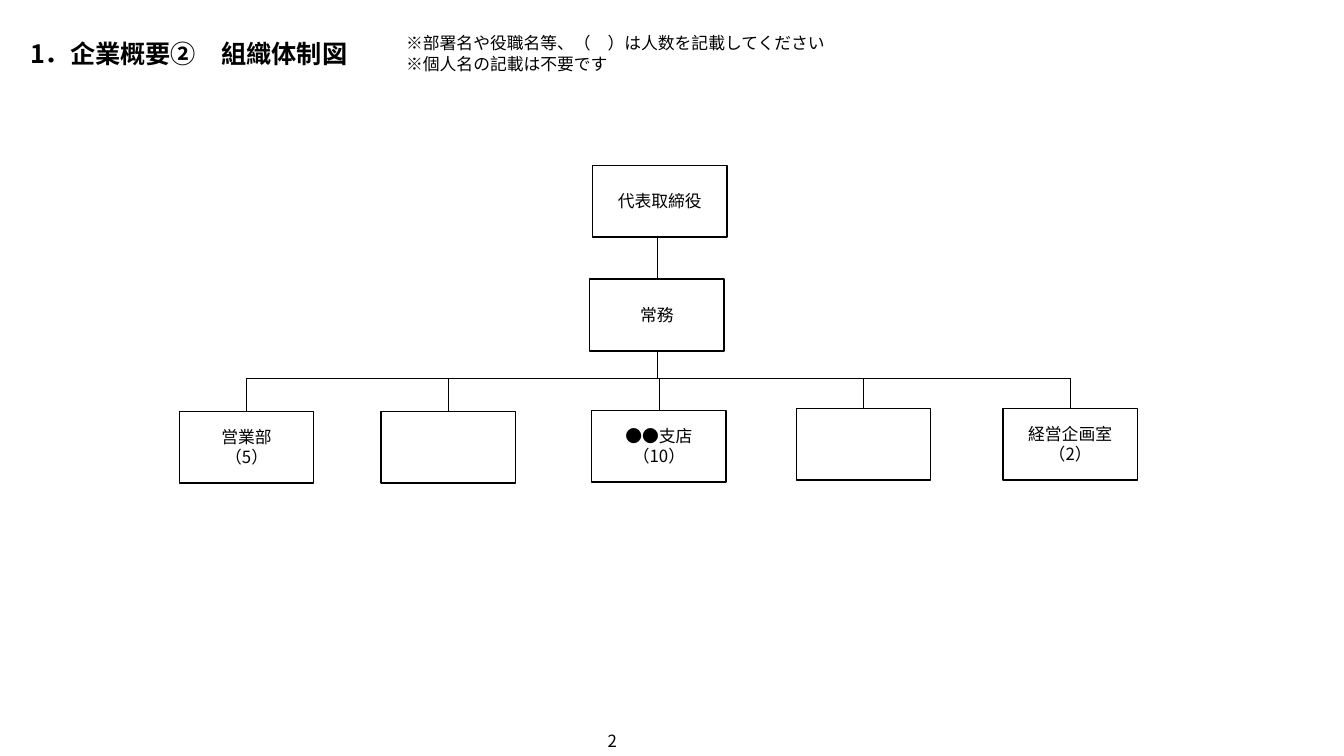
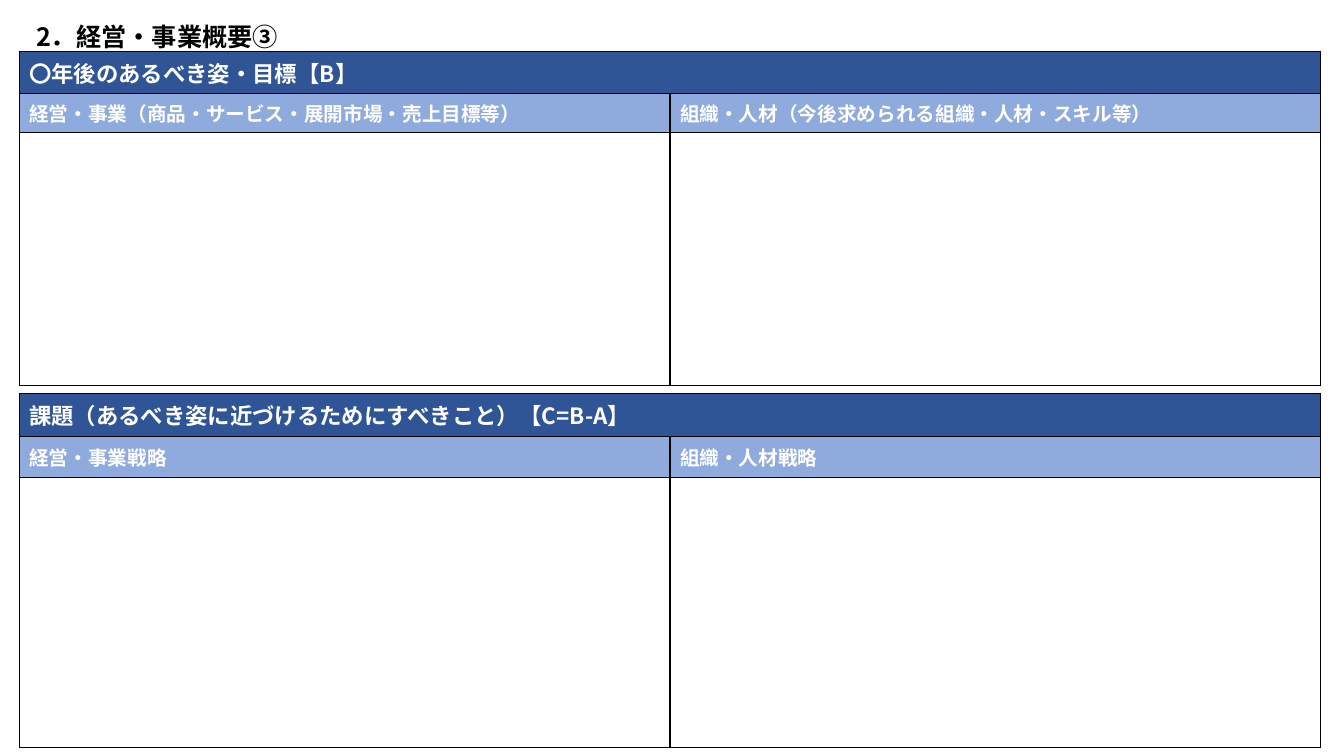
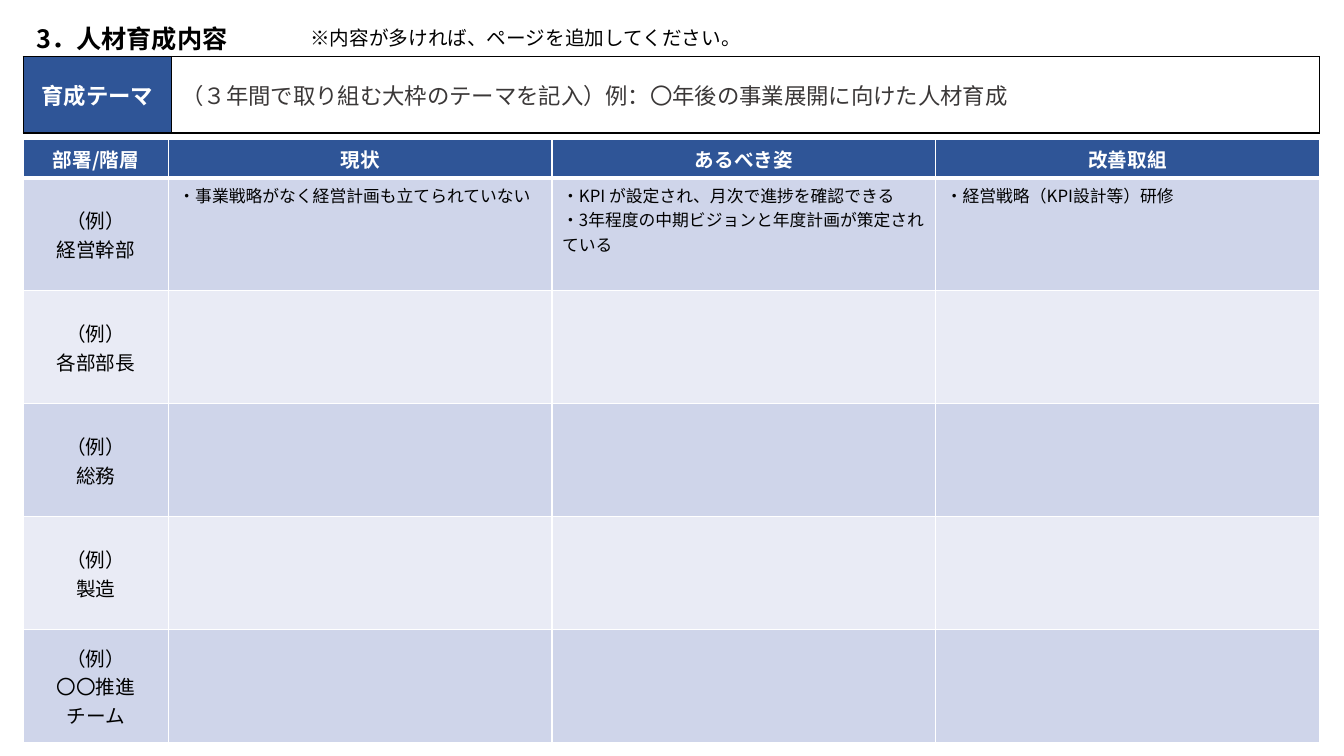
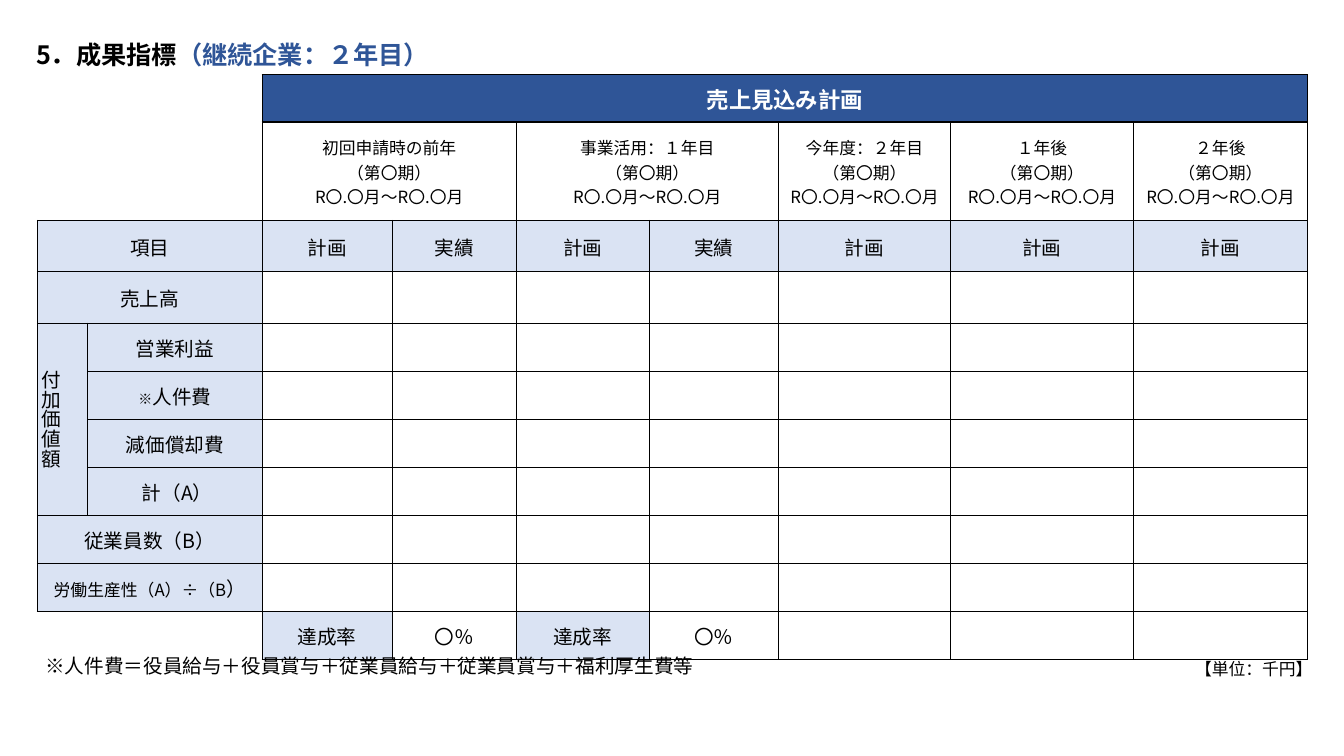
from dataclasses import dataclass

from lxml.etree import SubElement
from pptx import Presentation
from pptx.dml.color import RGBColor as RGB
from pptx.enum.shapes import MSO_CONNECTOR as CONN, MSO_SHAPE as SHAPE
from pptx.enum.text import MSO_ANCHOR as ANCHOR, MSO_AUTO_SIZE as AUTO, PP_ALIGN as ALIGN
from pptx.oxml.ns import qn
from pptx.util import Inches, Pt


@dataclass(frozen=True)
class Theme:
    font: str = "Noto Sans CJK JP"
    black: str = "000000"
    white: str = "FFFFFF"
    navy: str = "2F5597"
    blue: str = "8FAADC"
    pale: str = "DAE3F3"
    bands: tuple = ("CFD5EA", "E9EBF5")
    hint: str = "3B3838"
    title: int = 18
    head: int = 16
    body: int = 14
    small: int = 12
    tiny: int = 10


T = Theme()
prs = Presentation()
prs.slide_width, prs.slide_height = Inches(13.33), Inches(7.5)
# The grid has 100 columns and 100 rows.
COL, ROW = prs.slide_width / 100, prs.slide_height / 100
org, goals, training, results = [
    prs.slides.add_slide(prs.slide_layouts[6]) for _ in range(4)]


def write(tf, text, size, color=T.black, bold=False, align=ALIGN.LEFT):
    """Fill a text frame: a newline starts a paragraph, a bar starts a run."""
    for i, line in enumerate(text.split("\n")):
        p = tf.add_paragraph() if i else tf.paragraphs[0]
        p.alignment = align
        p.font.size, p.font.bold, p.font.name = Pt(size), bold, T.font
        p.font.color.rgb = RGB.from_string(color)
        SubElement(p.font._rPr, qn("a:ea"), typeface=T.font)
        for part in line.split("|"):
            p.add_run().text = part


def add_grid(s, x, y, cols, rows, color=T.black, edges=lambda r, c: (1, 1, 1, 1)):
    """Add an unfilled table; edges gives left, right, top, bottom widths of a cell."""
    tbl = s.shapes.add_table(len(rows), len(cols), int(x * COL), int(y * ROW),
                             int(sum(cols) * COL), int(sum(rows) * ROW)).table
    tbl.first_row = tbl.horz_banding = False
    for c, w in enumerate(cols):
        tbl.columns[c].width = int(w * COL)
    for r, h in enumerate(rows):
        tbl.rows[r].height = int(h * ROW)
        for c in range(len(cols)):
            cell = tbl.cell(r, c)
            cell.vertical_anchor = ANCHOR.MIDDLE
            tcPr = cell._tc.get_or_add_tcPr()
            for side, width in zip("LRTB", edges(r, c)):
                ln = SubElement(tcPr, qn("a:ln" + side), w=str(Pt(width)))
                if width:
                    fill = SubElement(ln, qn("a:solidFill"))
                    SubElement(fill, qn("a:srgbClr"), val=color)
                else:
                    SubElement(ln, qn("a:noFill"))
            cell.fill.background()
    return tbl


# Organisation chart
BOX_W, BOX_H, BUS_Y, STEM_X = 10, 9.5, 50, 48.9
departments = [(13.35, 54.4, "営業部\n（5）"), (28.35, 54.4, ""),
               (44.03, 54.27, "●●支店\n（10）"), (59.25, 54, ""),
               (74.63, 54, "経営企画室\n（2）")]
president_y, director_y = 21.87, 36.93
for x, y, label in [(44.1, president_y, "代表取締役"),
                    (43.88, director_y, "常務")] + departments:
    sp = org.shapes.add_shape(SHAPE.RECTANGLE, int(x * COL), int(y * ROW),
                              int(BOX_W * COL), int(BOX_H * ROW))
    sp.shadow.inherit = False
    sp.fill.solid()
    sp.fill.fore_color.rgb = RGB.from_string(T.white)
    sp.line.color.rgb = RGB.from_string(T.black)
    sp.line.width = Pt(1)
    sp.text_frame.vertical_anchor = ANCHOR.MIDDLE
    if label:
        write(sp.text_frame, label, T.small, align=ALIGN.CENTER)

drops = [(x + BOX_W / 2, BUS_Y, x + BOX_W / 2, y) for x, y, _ in departments]
stems = [(STEM_X, president_y + BOX_H, STEM_X, director_y),
         (STEM_X, director_y + BOX_H, STEM_X, BUS_Y)]
bus = (drops[0][0], BUS_Y, drops[-1][0], BUS_Y)
for x1, y1, x2, y2 in stems + [bus] + drops:
    ln = org.shapes.add_connector(CONN.STRAIGHT, int(x1 * COL), int(y1 * ROW),
                                  int(x2 * COL), int(y2 * ROW))
    ln.line.color.rgb = RGB.from_string(T.black)
    ln.line.width = Pt(0.5)
    SubElement(ln._element.spPr, qn("a:effectLst"))

# Goals and issues
for y, rows, heading, subheads in [
    (6.8, (5.33, 5.07, 33.47), "〇年後のあるべき姿・目標【B】",
     ("経営・事業（商品・サービス・展開市場・売上目標等）",
      "組織・人材（今後求められる組織・人材・スキル等）")),
    (52, (5.73, 5.47, 35.73), "課題（あるべき姿に近づけるためにすべきこと）【C=B-A】",
     ("経営・事業戦略", "組織・人材戦略")),
]:
    tbl = add_grid(goals, 1.43, y, [48.42] * 2, rows)
    tbl.cell(0, 0).merge(tbl.cell(0, 1))
    write(tbl.cell(0, 0).text_frame, heading, T.head, T.white, True)
    for c, subhead in enumerate(subheads):
        write(tbl.cell(1, c).text_frame, subhead, T.body, T.white, True)
        for r, color in enumerate((T.navy, T.blue, T.white)):
            tbl.cell(r, c).fill.solid()
            tbl.cell(r, c).fill.fore_color.rgb = RGB.from_string(color)

# Training plan
plan = [
    ("部署/階層", "現状", "あるべき姿", "改善取組"),
    ("（例）\n経営幹部", "・事業戦略がなく経営計画も立てられていない",
     "・KPI が設定され、月次で進捗を確認できる\n・3年程度の中期ビジョンと年度計画が策定されている",
     "・経営戦略（KPI設計等）研修"),
    ("（例）\n各部部長", "", "", ""),
    ("（例）\n総務", "", "", ""),
    ("（例）\n製造", "", "", ""),
    ("（例）\n〇〇推進\nチーム", "", "", ""),
]
tbl = add_grid(training, 1.73, 18.4, [10.8] + [28.55] * 3, [5.07] + [14.95] * 5, T.white,
               lambda r, c: (1, 1, 3 if r == 1 else 1, 1 if r else 3))
for r, texts in enumerate(plan):
    for c, text in enumerate(texts):
        cell = tbl.cell(r, c)
        cell.fill.solid()
        cell.fill.fore_color.rgb = RGB.from_string(T.bands[(r - 1) % 2] if r else T.navy)
        if r == 0:
            write(cell.text_frame, text, T.body, T.white, True, ALIGN.CENTER)
        elif c == 0:
            write(cell.text_frame, text, T.body, align=ALIGN.CENTER)
        else:
            cell.vertical_anchor = ANCHOR.TOP
            if text:
                write(cell.text_frame, text, T.small)

tbl = add_grid(training, 1.73, 7.47, (11.03, 85.43), [10.13])
for c, (text, back, color, bold, align) in enumerate([
    ("育成テーマ", T.navy, T.white, True, ALIGN.CENTER),
    ("（３年間で取り組む大枠のテーマを記入）例：〇年後の事業展開に向けた人材育成",
     T.white, T.hint, False, ALIGN.LEFT),
]):
    cell = tbl.cell(0, c)
    cell.fill.solid()
    cell.fill.fore_color.rgb = RGB.from_string(back)
    write(cell.text_frame, text, T.head, color, bold, align)

# Result indicators
blank_corners = {0: (0, 1, 0, 0), 1: (0, 1, 0, 1), 10: (0, 1, 1, 0)}
tbl = add_grid(results, 2.78, 9.87,
               (3.75, 12.98, 9.68, 9.23, 9.9, 9.6, 12.83, 13.58, 12.98),
               [6.27, 10.27] + [6.8] * 2 + [6.36] * 7,
               edges=lambda r, c: blank_corners.get(r, (1,) * 4) if c < 2 else (1,) * 4)
for r1, c1, r2, c2 in [(r, 0, r, 1) for r in (0, 1, 2, 3, 8, 9, 10)] + [
        (0, 2, 0, 8), (1, 2, 1, 3), (1, 4, 1, 5), (4, 0, 7, 0)]:
    tbl.cell(r1, c1).merge(tbl.cell(r2, c2))

labels = {(2, 0): "項目", (3, 0): "売上高", (4, 0): "付加価値額", (4, 1): "営業利益",
          (5, 1): "※|人件費", (6, 1): "減価償却費", (7, 1): " 計（A）",
          (8, 0): "従業員数（B）", (9, 0): "労働生産性（A）÷（B|）"}
labels |= {(2, c): "実績" if c in (3, 5) else "計画" for c in range(2, 9)}
labels |= {(10, c): "達成率" for c in (2, 4)}
periods = {2: "初回申請時の前年", 4: "事業活用：１年目", 6: "今年度：２年目",
           7: "１年後", 8: "２年後"}
entries = [(0, 2, "売上見込み計画", T.head, T.white, T.navy)]
entries += [(1, c, name + "\n（第〇期）\nR〇.〇月～R〇.〇月", T.small, T.black, None)
            for c, name in periods.items()]
entries += [(r, c, text, T.body, T.black, T.pale) for (r, c), text in labels.items()]
entries += [(10, c, "〇％", T.body, T.black, None) for c in (3, 5)]
for r, c, text, size, color, back in entries:
    cell = tbl.cell(r, c)
    cell.margin_left = cell.margin_right = cell.margin_top = Inches(0.01)
    cell.margin_bottom = 0
    write(cell.text_frame, text, size, color, r == 0, ALIGN.CENTER)
    if back:
        cell.fill.solid()
        cell.fill.fore_color.rgb = RGB.from_string(back)
tbl.cell(4, 0)._tc.get_or_add_tcPr().set("vert", "eaVert")
for r, c, size in [(5, 1, T.tiny), (9, 0, T.small)]:
    tbl.cell(r, c).text_frame.paragraphs[0].runs[0].font.size = Pt(size)

# Titles, notes and page number
for s, x, y, w, h, text, size, align in [
    (org, 44.1, 96, 2.93, 4, "2", T.small, ALIGN.CENTER),
    (org, 29.48, 3.73, 39.15, 6.67,
     "※部署名や役職名等、（　）は人数を記載してください\n※個人名の記載は不要です", T.small, ALIGN.LEFT),
    (training, 22.35, 2.8, 32.93, 4.53,
     "※内容が多ければ、ページを追加してください。", T.body, ALIGN.LEFT),
    (results, 85.65, 86.53, 12.75, 4, "【単位：千円】", T.small, ALIGN.RIGHT),
    (results, 2.63, 85.87, 51.23, 4.53,
     "※人件費＝役員給与＋役員賞与＋従業員給与＋従業員賞与＋福利厚生費等", T.body, ALIGN.LEFT),
    (org, 1.5, 4.4, 29.93, 5.33, "1．企業概要②　組織体制図", T.title, ALIGN.LEFT),
    (goals, 1.95, 2.13, 29.93, 5.33, "2．経営・事業概要③", T.title, ALIGN.LEFT),
    (training, 1.95, 2.4, 20.4, 5.33, "3．人材育成内容", T.title, ALIGN.LEFT),
    (results, 1.95, 4.53, 34.13, 5.33, "5．成果指標|（継続企業：２年目）", T.title, ALIGN.LEFT),
]:
    tf = s.shapes.add_textbox(int(x * COL), int(y * ROW), int(w * COL), int(h * ROW)).text_frame
    tf.word_wrap = True
    tf.auto_size = AUTO.SHAPE_TO_FIT_TEXT
    write(tf, text, size, bold=size == T.title, align=align)
    for r in tf.paragraphs[0].runs[1:]:
        r.font.color.rgb = RGB.from_string(T.navy)

prs.save("out.pptx")
